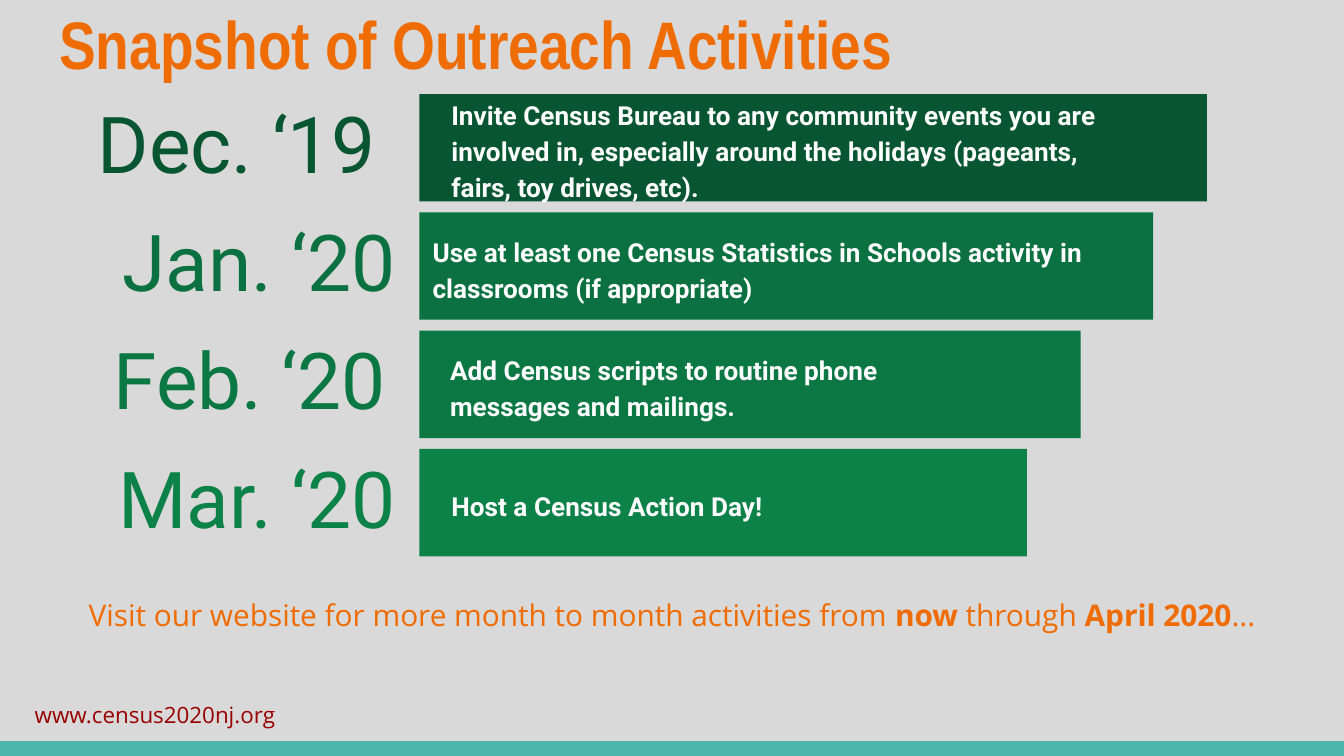
from pptx import Presentation
from pptx.dml.color import RGBColor
from pptx.enum.shapes import MSO_SHAPE
from pptx.enum.text import MSO_ANCHOR, MSO_AUTO_SIZE, PP_ALIGN
from pptx.util import Inches, Pt


def paint(fill, color):
    fill.solid()
    fill.fore_color.rgb = RGBColor.from_string(color)


def write(shape, box, runs, font_name, size, color, align=PP_ALIGN.LEFT,
          anchor=MSO_ANCHOR.TOP, spacing=1.0, inset=0.1):
    shape.left, shape.top, shape.width, shape.height = [Inches(length) for length in box]
    frame = shape.text_frame
    frame.word_wrap = True
    frame.auto_size = MSO_AUTO_SIZE.NONE
    frame.vertical_anchor = anchor
    frame.margin_left = frame.margin_right = Inches(0.1)
    frame.margin_top = frame.margin_bottom = Inches(inset)
    paragraph = frame.paragraphs[0]
    paragraph.alignment = align
    paragraph.line_spacing = spacing
    for text, bold in runs:
        run = paragraph.add_run()
        run.text = text
        run.font.name = font_name
        run.font.size = Pt(size)
        run.font.bold = bold
        paint(run.font.fill, color)


WIDTH = 10
HEIGHT = WIDTH * 9 / 16
ORANGE = "EF6C00"
BAR_LEFT, BAR_HEIGHT = 3.12, 0.8
FIRST_ROW, ROW_PITCH = 0.7, 0.88
LABEL_HEIGHT = 0.69
BAND_HEIGHT = 0.11

presentation = Presentation()
presentation.slide_width = Inches(WIDTH)
presentation.slide_height = Inches(HEIGHT)
slide = presentation.slides.add_slide(presentation.slide_layouts[5])
paint(slide.background.fill, "D9D9D9")

website = slide.shapes.add_textbox(0, 0, 0, 0)
write(website, (0.16, 5.12, 2.43, 0.31), [("www.census2020nj.org", False)],
      "Open Sans", 12, "980000")

footer_band = slide.shapes.add_shape(
    MSO_SHAPE.RECTANGLE, 0, Inches(HEIGHT - BAND_HEIGHT), Inches(WIDTH), Inches(BAND_HEIGHT))
footer_band.shadow.inherit = False
paint(footer_band.fill, "4DB6AC")
footer_band.line.fill.background()

write(slide.shapes.title, (0.34, -0.08, 9.32, 0.77),
      [("Snapshot of Outreach Activities", True)], "Arial Narrow", 36, ORANGE)

months = [
    ("Dec. ‘19 ", 0.49, 3.04, "085631", 5.86, 3.26, 5.35, 0.63,
     "Invite Census Bureau to any community events you are involved in, "
     "especially around the holidays (pageants, fairs, toy drives, etc)."),
    ("Jan. ‘20", 0.49, 3.04, "0B7140", 5.46, 3.12, 5.39, 0.38,
     "Use at least one Census Statistics in Schools activity in classrooms (if appropriate)"),
    ("Feb. ‘20", 0.64, 2.97, "0B7743", 4.92, 3.25, 4.21, 0.36,
     "Add Census scripts to routine phone messages and mailings."),
    ("Mar. ‘20", 0.49, 3.04, "0C8148", 4.52, 3.26, 4.21, 0.36,
     "Host a Census Action Day!"),
]
for row, (month, label_left, label_right, color, bar_width,
          text_left, text_width, text_height, activity) in enumerate(months):
    top = FIRST_ROW + row * ROW_PITCH
    middle = top + BAR_HEIGHT / 2
    group = slide.shapes.add_group_shape()

    label = group.shapes.add_textbox(0, 0, 0, 0)
    write(label, (label_left, middle - LABEL_HEIGHT / 2, label_right - label_left, LABEL_HEIGHT),
          [(month, False)], "Roboto", 42, color, PP_ALIGN.RIGHT, MSO_ANCHOR.MIDDLE, 0.9, 0.05)

    bar = group.shapes.add_shape(MSO_SHAPE.RECTANGLE, Inches(BAR_LEFT), Inches(top),
                                 Inches(bar_width), Inches(BAR_HEIGHT))
    bar.shadow.inherit = False
    paint(bar.fill, color)
    bar.line.fill.background()

    description = group.shapes.add_textbox(0, 0, 0, 0)
    write(description, (text_left, middle + 0.01 - text_height / 2, text_width, text_height),
          [(activity, True)], "Roboto", 14, "FFFFFF",
          anchor=MSO_ANCHOR.MIDDLE, spacing=1.15, inset=0.05)

invitation = slide.shapes.add_textbox(0, 0, 0, 0)
write(invitation, (0, 4.34, WIDTH, 0.67),
      [("Visit our website for more month to month activities from ", False), ("now", True),
       (" through ", False), ("April 2020", True), ("...", False)],
      "Open Sans", 16, ORANGE, PP_ALIGN.CENTER)

presentation.save("out.pptx")
